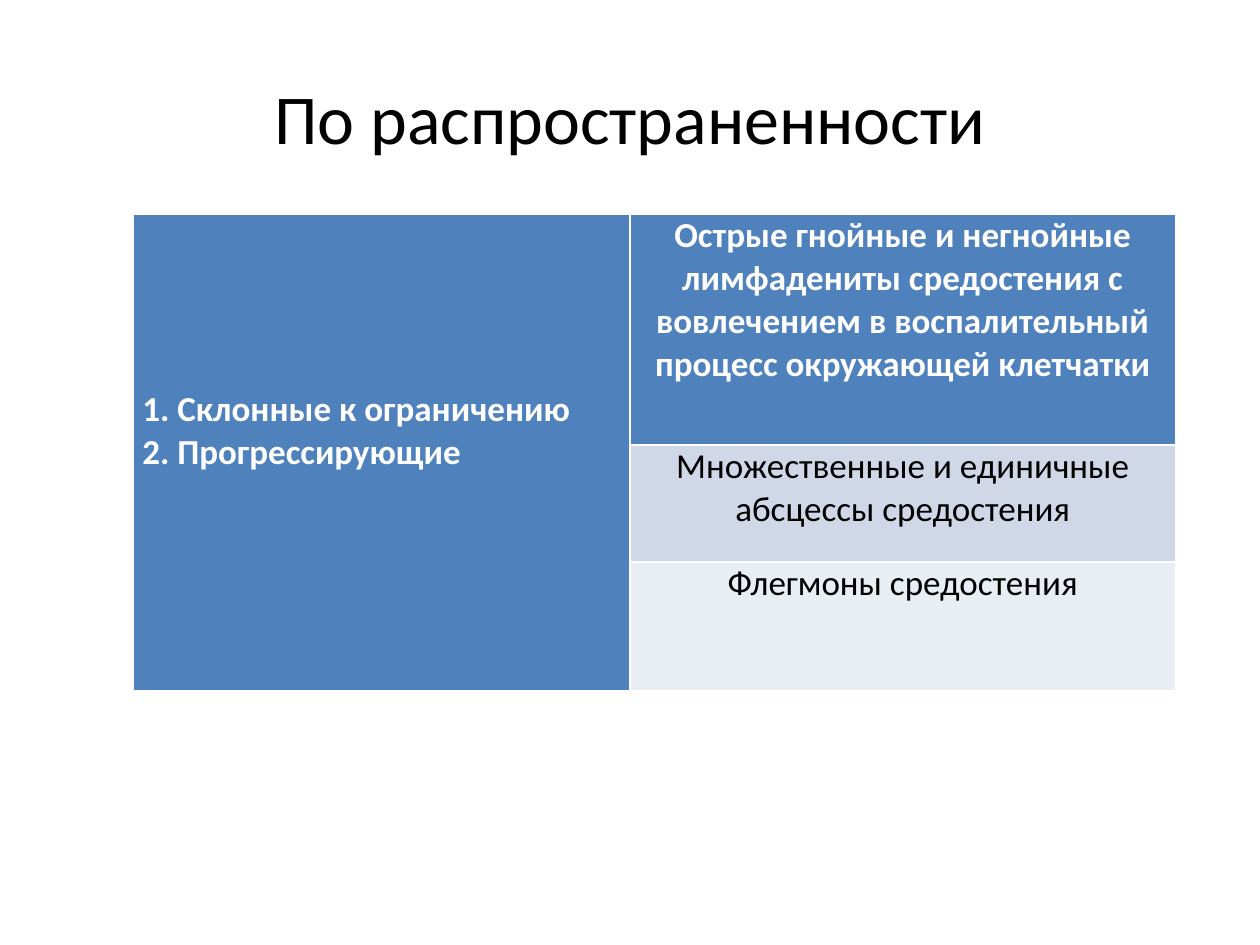
from pptx import Presentation
from pptx.dml.color import RGBColor
from pptx.enum.text import MSO_ANCHOR, PP_ALIGN
from pptx.util import Inches, Pt

LEFT, CENTER = PP_ALIGN.LEFT, PP_ALIGN.CENTER
TOP, MIDDLE = MSO_ANCHOR.TOP, MSO_ANCHOR.MIDDLE
BLACK = RGBColor(0x00, 0x00, 0x00)
WHITE = RGBColor(0xFF, 0xFF, 0xFF)
BLUE = RGBColor(0x4F, 0x81, 0xBD)
LIGHT_BLUE = RGBColor(0xD0, 0xD8, 0xE8)
PALE_BLUE = RGBColor(0xE9, 0xED, 0xF4)
TITLE_ONLY = 5
COLUMN_WIDTHS = [3.94, 4.33]
ROW_HEIGHTS = [1.83, 0.93, 0.47]


def format_paragraph(para, alignment, color, **font_values):
    para.alignment = alignment
    para.font.color.rgb = color
    for name, value in {"name": "Calibri", **font_values}.items():
        setattr(para.font, name, value)


deck = Presentation()
deck.slide_width, deck.slide_height = Inches(10), Inches(7.5)
page = deck.slides.add_slide(deck.slide_layouts[TITLE_ONLY])

title = page.shapes.title
title_place = {"left": 0.5, "top": 0.3, "width": 9, "height": 1.25}
for name, value in title_place.items():
    setattr(title, name, Inches(value))
title.text_frame.text = "По распространенности"
title.text_frame.vertical_anchor = MIDDLE
format_paragraph(title.text_frame.paragraphs[0], CENTER, BLACK, size=Pt(40))

table = page.shapes.add_table(
    len(ROW_HEIGHTS), len(COLUMN_WIDTHS), Inches(1.06), Inches(1.7),
    Inches(sum(COLUMN_WIDTHS)), Inches(sum(ROW_HEIGHTS)),
).table
for column, width in zip(table.columns, COLUMN_WIDTHS):
    column.width = Inches(width)
for row, height in zip(table.rows, ROW_HEIGHTS):
    row.height = Inches(height)
table.cell(0, 0).merge(table.cell(2, 0))

cells = [
    (0, 0, "1. Склонные к ограничению\n2. Прогрессирующие",
     BLUE, WHITE, True, LEFT, MIDDLE, 0.34),
    (0, 1, "Острые гнойные и негнойные лимфадениты средостения с "
     "вовлечением в воспалительный процесс окружающей клетчатки",
     BLUE, WHITE, True, CENTER, TOP, 0),
    (1, 1, "Множественные и единичные абсцессы средостения",
     LIGHT_BLUE, BLACK, False, CENTER, TOP, 0),
    (2, 1, "Флегмоны средостения",
     PALE_BLUE, BLACK, False, CENTER, TOP, 0),
]
for row, column, text, fill, color, bold, alignment, anchor, bottom in cells:
    cell = table.cell(row, column)
    cell.text = text
    cell.fill.solid()
    cell.fill.fore_color.rgb = fill
    cell.vertical_anchor = anchor
    margins = {"left": 0.07, "top": 0, "right": 0.07, "bottom": bottom}
    for side, value in margins.items():
        setattr(cell, f"margin_{side}", Inches(value))
    for para in cell.text_frame.paragraphs:
        format_paragraph(para, alignment, color, size=Pt(20), bold=bold)
        for span in para.runs:
            span.font.size = Pt(20)
            span.font.bold = bold
            span.font.name = "Calibri"
            span.font.color.rgb = color

deck.save("out.pptx")
